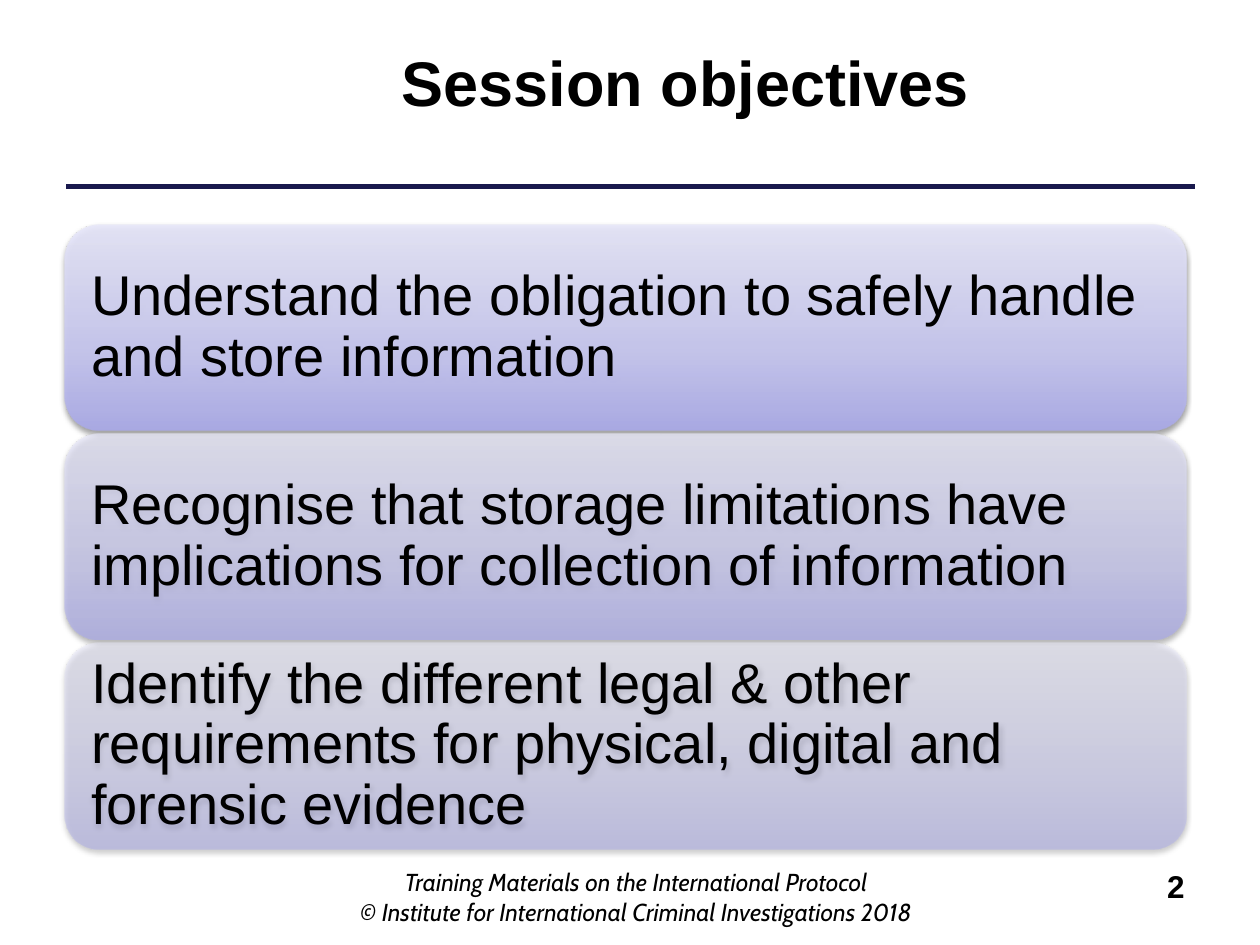
from lxml import etree
from pptx import Presentation
from pptx.dml.color import RGBColor
from pptx.enum import shapes, text
from pptx.oxml import ns
from pptx.util import Pt

BLACK = RGBColor(0x00, 0x00, 0x00)
NAVY = RGBColor(0x19, 0x19, 0x4D)
LAVENDER_STOPS = [
    (0, RGBColor(0xA9, 0xA9, 0xE9)),
    (35, RGBColor(0xC4, 0xC4, 0xEF)),
    (100, RGBColor(0xE8, 0xE8, 0xFA)),
]


def add_color(parent, color, opacity):
    """Append an sRGB colour with an opacity in percent."""
    srgb = etree.SubElement(parent, ns.qn("a:srgbClr"), val=str(color))
    etree.SubElement(srgb, ns.qn("a:alpha"), val=str(opacity * 1000))


def write(frame, lines, align, **font_format):
    """Fill a text frame, one paragraph per line, in one format."""
    frame.word_wrap = True
    frame.text = "\n".join(lines)
    for paragraph in frame.paragraphs:
        paragraph.alignment = align
        paragraph.font.color.rgb = BLACK
        for name, value in font_format.items():
            setattr(paragraph.font, name, value)


prs = Presentation()
prs.slide_width, prs.slide_height = Pt(720), Pt(540)
slide = prs.slides.add_slide(prs.slide_layouts[5])

# Heading and rule
title = slide.shapes.title
title.left, title.top, title.width, title.height = Pt(111), Pt(21), Pt(561.5), Pt(51)
title.text_frame.vertical_anchor = text.MSO_ANCHOR.MIDDLE
write(title.text_frame, ["Session objectives"], text.PP_ALIGN.CENTER,
      name="Arial", size=Pt(36), bold=True)

rule = slide.shapes.add_connector(
    shapes.MSO_CONNECTOR.STRAIGHT, Pt(38), Pt(106.5), Pt(683), Pt(106.5))
rule.line.color.rgb = NAVY
rule.line.width = Pt(2.5)
etree.SubElement(rule._element.spPr, ns.qn("a:effectLst"))

# Objectives, each panel fainter than the one above
objectives = [
    ("Understand the obligation to safely handle and store information", 90),
    ("Recognise that storage limitations have implications for "
     "collection of information", 70),
    ("Identify the different legal & other requirements for physical, "
     "digital and forensic evidence", 50),
]
for row, (objective, opacity) in enumerate(objectives):
    panel = slide.shapes.add_shape(
        shapes.MSO_SHAPE.ROUNDED_RECTANGLE,
        Pt(36.7), Pt(128.2 + row * 119.5), Pt(641), Pt(118))
    panel.fill.gradient()
    panel.fill.gradient_angle = 90
    stops = panel._element.spPr.find(".//" + ns.qn("a:gsLst"))
    for old_stop in list(stops):
        stops.remove(old_stop)
    for position, color in LAVENDER_STOPS:
        stop = etree.SubElement(stops, ns.qn("a:gs"), pos=str(position * 1000))
        add_color(stop, color, opacity)
    panel.line.fill.background()

    panel.shadow.inherit = False
    effects = panel._element.spPr.find(ns.qn("a:effectLst"))
    shadow = etree.SubElement(
        effects, ns.qn("a:outerShdw"), blurRad=str(Pt(3.1)), dist=str(Pt(1.6)),
        dir="5400000", rotWithShape="0")
    add_color(shadow, BLACK, 38)

    frame = panel.text_frame
    frame.vertical_anchor = text.MSO_ANCHOR.MIDDLE
    for side in ("left", "top", "right", "bottom"):
        setattr(frame, f"margin_{side}", Pt(9.6))
    write(frame, [objective], text.PP_ALIGN.LEFT, name="Arial", size=Pt(32))
    frame.paragraphs[0].line_spacing = 0.9

# Footer and page number
footer = slide.shapes.add_textbox(Pt(196), Pt(492), Pt(335), Pt(37.5))
write(footer.text_frame,
      ["Training Materials on the International Protocol",
       "© Institute for International Criminal Investigations 2018"],
      text.PP_ALIGN.CENTER, name="Cabin", size=Pt(14), italic=True)

page_number = slide.shapes.add_textbox(Pt(516), Pt(492), Pt(168), Pt(37.5))
write(page_number.text_frame, ["2"], text.PP_ALIGN.RIGHT,
      name="Arial", size=Pt(18), bold=True)

prs.save("out.pptx")
